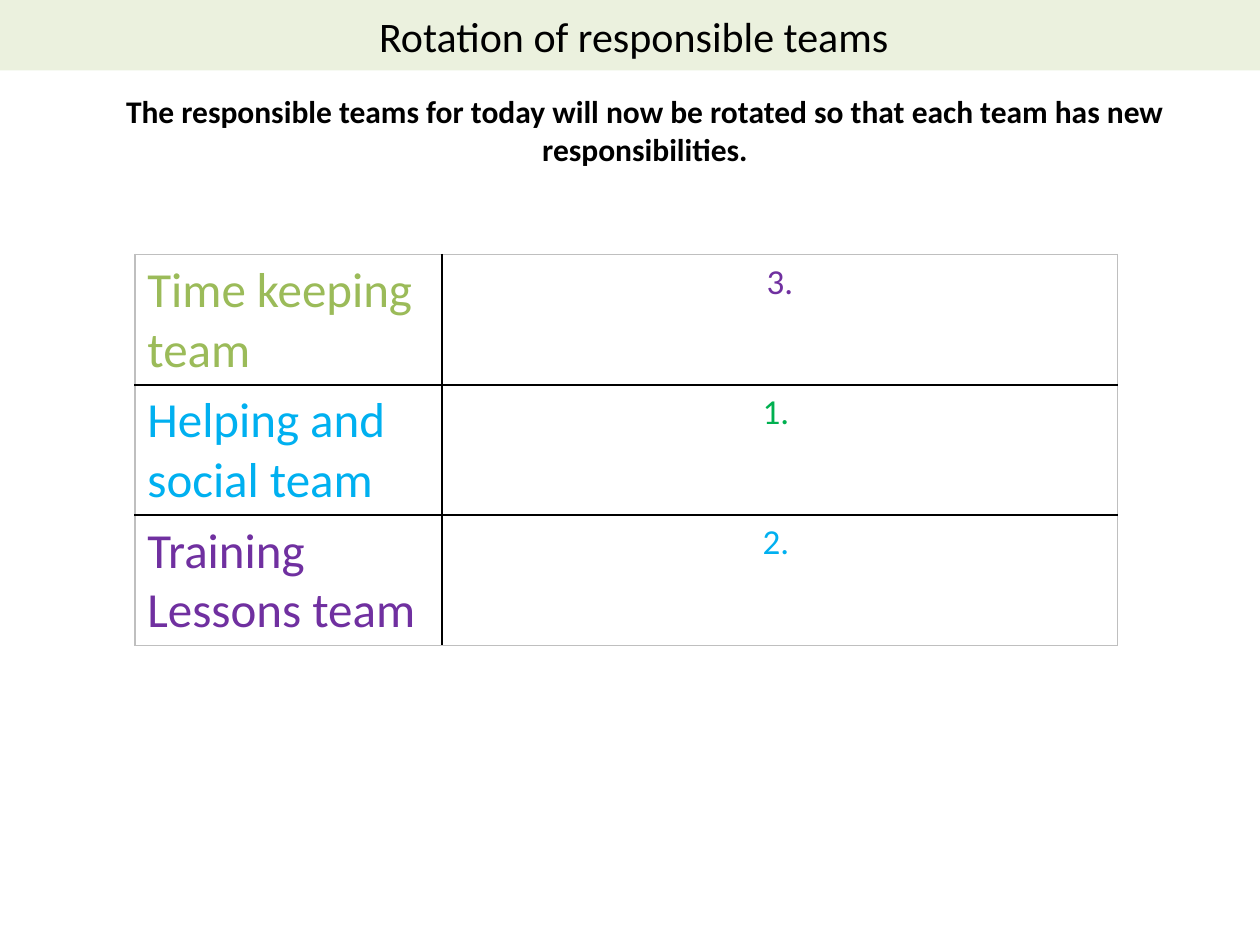
from lxml import etree
from pptx import Presentation
from pptx.dml.color import RGBColor
from pptx.enum import shapes, text
from pptx.oxml import ns
from pptx.util import Inches, Pt

HUES = {
    "black": "000000",
    "gray": "BFBFBF",
    "pale": "EBF1DE",
    "olive": "9BBB59",
    "sky": "00B0F0",
    "plum": "7030A0",
    "green": "00B050",
}
TEAMS = [
    ("Time keeping team", "olive", "3.", "plum"),
    ("Helping and social team", "sky", "1. ", "green"),
    ("Training Lessons team", "plum", "2. ", "sky"),
]
MID = text.PP_ALIGN.CENTER


def write(frame, words, size, hue="black", bold=False, align=MID):
    frame.word_wrap = True
    para = frame.paragraphs[0]
    para.alignment = align
    run = para.add_run()
    run.text = words
    font = run.font
    font.name, font.size, font.bold = "Calibri", Pt(size), bold
    font.color.rgb = RGBColor.from_string(HUES[hue])


def edge(cell, hues):
    props = cell._tc.get_or_add_tcPr()
    for spot, (side, hue) in enumerate(zip("LRTB", hues)):
        line = etree.Element(ns.qn(f"a:ln{side}"), w=str(Pt(1)))
        fill = etree.SubElement(line, ns.qn("a:solidFill"))
        etree.SubElement(fill, ns.qn("a:srgbClr"), val=HUES[hue])
        props.insert(spot, line)


def banner(slide, left, top, width, height):
    bar = slide.shapes.add_shape(
        shapes.MSO_SHAPE.RECTANGLE, left, top, width, height)
    bar.shadow.inherit = False
    bar.fill.solid()
    bar.fill.fore_color.rgb = RGBColor.from_string(HUES["pale"])
    bar.line.fill.background()
    bar.text_frame.vertical_anchor = text.MSO_ANCHOR.MIDDLE
    write(bar.text_frame, "Rotation of responsible teams", 24)


def intro(slide, left, top, width, height):
    box = slide.shapes.add_textbox(left, top, width, height)
    write(box.text_frame,
          "The responsible teams for today will now be rotated "
          "so that each team has new responsibilities.", 18, bold=True)


def roster(slide, left, top, width, height):
    count = len(TEAMS)
    grid = slide.shapes.add_table(count, 2, left, top, width, height).table
    grid.first_row = grid.horz_banding = False
    grid.columns[0].width = Inches(2.44)
    grid.columns[1].width = width - Inches(2.44)
    for row, (team, hue, mark, tint) in enumerate(TEAMS):
        grid.rows[row].height = height // count
        name, turn = grid.cell(row, 0), grid.cell(row, 1)
        write(name.text_frame, team, 28, hue, align=text.PP_ALIGN.LEFT)
        write(turn.text_frame, mark, 20, tint)
        roof = "black" if row else "gray"
        base = "black" if row < count - 1 else "gray"
        for cell, sides in ((name, ("gray", "black")),
                            (turn, ("black", "gray"))):
            cell.fill.background()
            edge(cell, (*sides, roof, base))


def main():
    deck = Presentation()
    deck.slide_width, deck.slide_height = Inches(10), Inches(7.5)
    slide = deck.slides.add_slide(deck.slide_layouts[6])
    banner(slide, 0, 0, Inches(10.06), Inches(0.56))
    intro(slide, Inches(0.24), Inches(0.68), Inches(9.76), Inches(2.22))
    roster(slide, Inches(1.07), Inches(2.02), Inches(7.8), Inches(3.1))
    deck.save("out.pptx")


if __name__ == "__main__":
    main()
